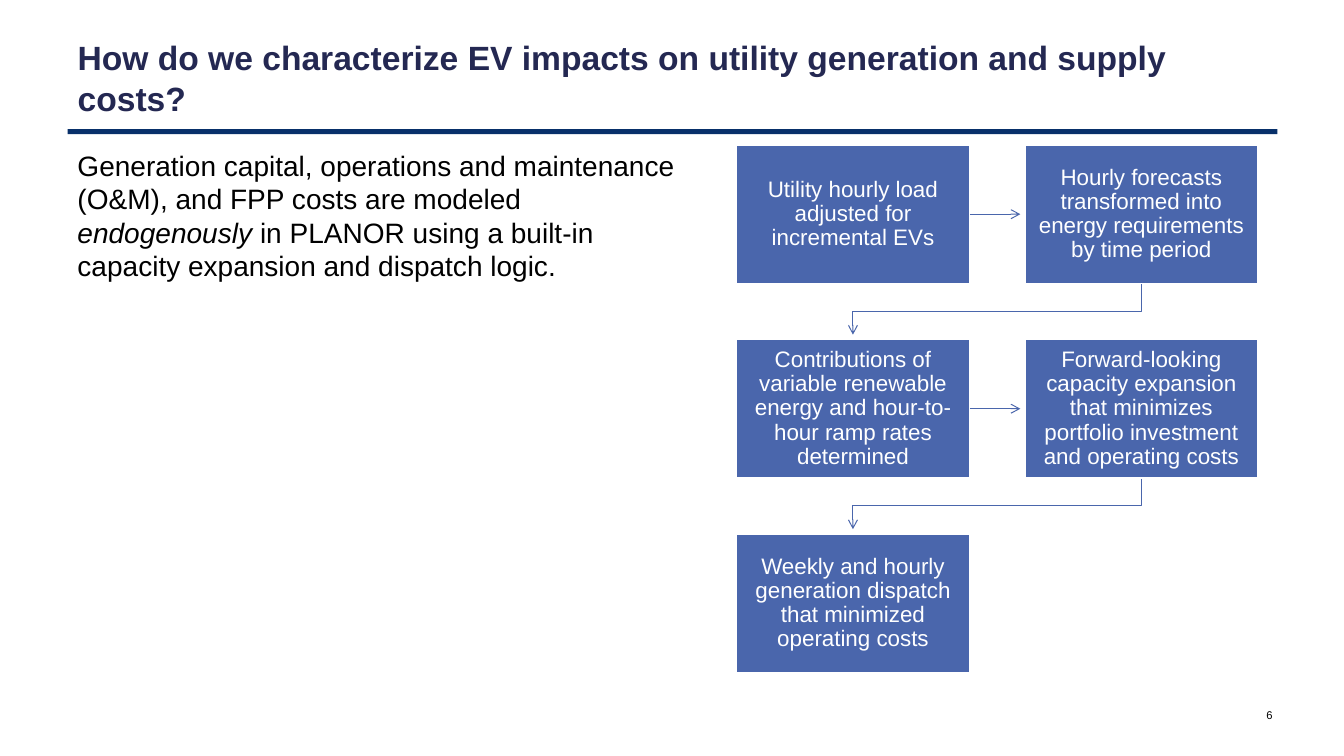
from lxml import etree
from pptx import Presentation
from pptx.dml.color import RGBColor
from pptx.enum.shapes import MSO_CONNECTOR, MSO_SHAPE
from pptx.enum.text import MSO_ANCHOR, MSO_AUTO_SIZE, PP_ALIGN
from pptx.oxml.ns import qn
from pptx.util import Inches, Pt

TITLE = "How do we characterize EV impacts on utility generation and supply costs?"
BODY_RUNS = [
    ("Generation capital, operations and maintenance (O&M), and FPP costs are modeled ", False),
    ("endogenously", True),
    (" in PLANOR using a built-in capacity expansion and dispatch logic.", False),
]
STEPS = [
    "Utility hourly load adjusted for incremental EVs",
    "Hourly forecasts transformed into energy requirements by time period",
    "Contributions of variable renewable energy and hour-to-hour ramp rates determined",
    "Forward-looking capacity expansion that minimizes portfolio investment and operating costs",
    "Weekly and hourly generation dispatch that minimized operating costs",
]
PAGE_NUMBER = "6"

NAVY = RGBColor(0x24, 0x28, 0x52)
RULE_BLUE = RGBColor(0x08, 0x30, 0x6A)
STEP_BLUE = RGBColor(0x4A, 0x66, 0xAC)
WHITE = RGBColor(0xFF, 0xFF, 0xFF)
BLACK = RGBColor(0, 0, 0)

COLUMNS = 2
FLOW_LEFT, FLOW_TOP = 7.3, 1.43
STEP_WIDTH, STEP_HEIGHT = 2.32, 1.39
COLUMN_PITCH, ROW_PITCH = 2.86, 1.93
ARROW_LENGTH = 0.5
ELBOW_DROP = 0.27


def style_runs(paragraph, size, color, bold=False):
    for run in paragraph.runs:
        run.font.name = "Arial"
        run.font.size = Pt(size)
        run.font.color.rgb = color
        run.font.bold = bold


def add_text_box(slide, left, top, width, height):
    text_frame = slide.shapes.add_textbox(
        Inches(left), Inches(top), Inches(width), Inches(height)).text_frame
    text_frame.word_wrap = True
    return text_frame


def add_rectangle(slide, left, top, width, height, color):
    shape = slide.shapes.add_shape(
        MSO_SHAPE.RECTANGLE, Inches(left), Inches(top), Inches(width), Inches(height))
    shape.shadow.inherit = False
    shape.fill.solid()
    shape.fill.fore_color.rgb = color
    shape.line.fill.background()
    return shape


def add_step(slide, left, top, text):
    shape = add_rectangle(slide, left, top, STEP_WIDTH, STEP_HEIGHT, STEP_BLUE)
    shape.line.color.rgb = WHITE
    shape.line.width = Pt(2)
    text_frame = shape.text_frame
    text_frame.word_wrap = True
    text_frame.vertical_anchor = MSO_ANCHOR.MIDDLE
    text_frame.margin_left = text_frame.margin_right = Inches(0.12)
    text_frame.margin_top = text_frame.margin_bottom = Inches(0.12)
    text_frame.text = text
    paragraph = text_frame.paragraphs[0]
    paragraph.alignment = PP_ALIGN.CENTER
    paragraph.line_spacing = 0.9
    style_runs(paragraph, 16, WHITE)
    return shape


def style_arrow(shape):
    shape.line.color.rgb = STEP_BLUE
    shape.line.width = Pt(0.75)
    outline = shape.element.spPr.find(qn("a:ln"))
    etree.SubElement(outline, qn("a:tailEnd"), type="arrow")


def add_straight_arrow(slide, step, left, top):
    start, middle = left + STEP_WIDTH, top + STEP_HEIGHT / 2
    connector = slide.shapes.add_connector(
        MSO_CONNECTOR.STRAIGHT, Inches(start), Inches(middle),
        Inches(start + ARROW_LENGTH), Inches(middle))
    connector.begin_connect(step, 3)
    style_arrow(connector)
    etree.SubElement(connector.element.spPr, qn("a:effectLst"))


def add_elbow_arrow(slide, left, top):
    """Lead from the bottom of a right-hand step to the first step of the next row."""
    start_x = left + STEP_WIDTH / 2
    end_x = FLOW_LEFT + STEP_WIDTH / 2
    start_y = top + STEP_HEIGHT
    turn_y = start_y + ELBOW_DROP
    builder = slide.shapes.build_freeform(Inches(start_x), Inches(start_y))
    corners = [(start_x, turn_y), (end_x, turn_y), (end_x, start_y + ARROW_LENGTH)]
    builder.add_line_segments([(Inches(x), Inches(y)) for x, y in corners], close=False)
    shape = builder.convert_to_shape()
    shape.shadow.inherit = False
    shape.fill.background()
    style_arrow(shape)


def add_flow(slide):
    for index, text in enumerate(STEPS):
        row, column = divmod(index, COLUMNS)
        left = FLOW_LEFT + column * COLUMN_PITCH
        top = FLOW_TOP + row * ROW_PITCH
        step = add_step(slide, left, top, text)
        if index == len(STEPS) - 1:
            continue
        if column < COLUMNS - 1:
            add_straight_arrow(slide, step, left, top)
        else:
            add_elbow_arrow(slide, left, top)


def add_title(slide):
    title = slide.shapes.title
    title.left, title.top = Inches(0.67), Inches(0.31)
    title.width, title.height = Inches(12), Inches(0.91)
    text_frame = title.text_frame
    text_frame.text = TITLE
    text_frame.word_wrap = True
    text_frame.auto_size = MSO_AUTO_SIZE.NONE
    text_frame.vertical_anchor = MSO_ANCHOR.BOTTOM
    text_frame.paragraphs[0].alignment = PP_ALIGN.LEFT
    style_runs(text_frame.paragraphs[0], 24, NAVY, bold=True)


def add_body(slide):
    paragraph = add_text_box(slide, 0.67, 1.42, 6.31, 5.25).paragraphs[0]
    for text, italic in BODY_RUNS:
        run = paragraph.add_run()
        run.text = text
        run.font.italic = italic
    style_runs(paragraph, 20, BLACK)


def add_page_number(slide):
    text_frame = add_text_box(slide, 12.22, 6.89, 0.5, 0.4)
    text_frame.text = PAGE_NUMBER
    text_frame.vertical_anchor = MSO_ANCHOR.MIDDLE
    text_frame.paragraphs[0].alignment = PP_ALIGN.RIGHT
    style_runs(text_frame.paragraphs[0], 8, BLACK)


def main():
    presentation = Presentation()
    presentation.slide_width = Inches(13.33)
    presentation.slide_height = Inches(7.5)
    slide = presentation.slides.add_slide(presentation.slide_layouts[5])
    add_rectangle(slide, 0.67, 1.28, 12, 0.05, RULE_BLUE)
    add_title(slide)
    add_body(slide)
    add_flow(slide)
    add_page_number(slide)
    presentation.save("out.pptx")


if __name__ == "__main__":
    main()
